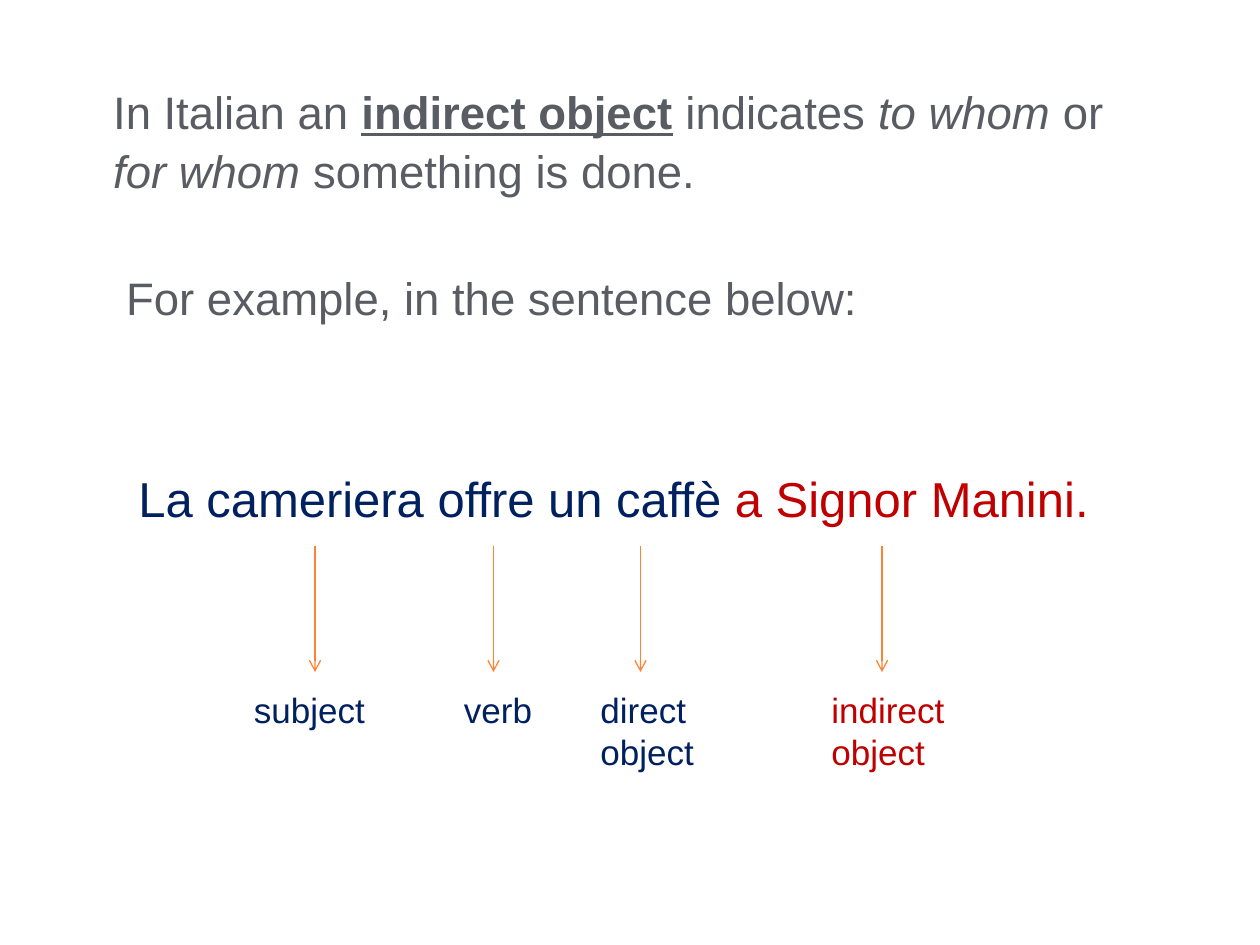
"""Build a slide that explains the indirect object in Italian."""
from lxml import etree
from pptx import Presentation
from pptx.dml.color import RGBColor
from pptx.enum.shapes import MSO_CONNECTOR
from pptx.oxml.ns import qn
from pptx.util import Pt

STRAIGHT = MSO_CONNECTOR.STRAIGHT
GREY = RGBColor(0x59, 0x5D, 0x63)
NAVY = RGBColor(0x00, 0x20, 0x60)
RED = RGBColor(0xC0, 0x00, 0x00)
ORANGE = RGBColor(0xFD, 0x82, 0x31)
FONT = "Arial"

DEFINITION = [
    ("In Italian an ", ""),
    ("indirect object", "bold underline"),
    (" indicates ", ""),
    ("to whom", "italic"),
    (" or ", ""),
    ("for whom", "italic"),
    (" something is done.", ""),
]
LEAD_IN = [("For example, in the sentence below:", "")]
INTRO = [(DEFINITION, 21.6, 11.4), (LEAD_IN, 29, 38.9)]
INTRO_LINE = 33.7

SENTENCE = [("La cameriera offre un caffè ", NAVY), ("a Signor Manini.", RED)]

PARTS = [
    ("subject", NAVY, 138, 90, 31, 180),
    ("verb", NAVY, 258, 78, 31, 282),
    ("direct object", NAVY, 336, 90, 55, 366),
    ("indirect object", RED, 468, 90, 55, 504),
]
ARROW_TOP, ARROW_BOTTOM, LABEL_TOP = 312, 384, 390


def add_text_frame(page, left, top, width, height):
    box = page.shapes.add_textbox(Pt(left), Pt(top), Pt(width), Pt(height))
    box.text_frame.word_wrap = True
    return box.text_frame


def add_span(para, text, size, colour, style=""):
    span = para.add_run()
    span.text = text
    span.font.name = FONT
    span.font.size = Pt(size)
    span.font.color.rgb = colour
    for name in style.split():
        setattr(span.font, name, True)


def add_intro(page):
    frame = add_text_frame(page, 36, 42, 612, 180)
    for index, (spans, indent, space) in enumerate(INTRO):
        para = frame.add_paragraph() if index else frame.paragraphs[0]
        para.line_spacing = Pt(INTRO_LINE)
        para.space_before = Pt(space)
        para._p.get_or_add_pPr().set("marL", str(Pt(indent)))
        for text, style in spans:
            add_span(para, text, 26, GREY, style)


def add_arrow(page, x):
    arrow = page.shapes.add_connector(
        STRAIGHT, Pt(x), Pt(ARROW_TOP), Pt(x), Pt(ARROW_BOTTOM))
    arrow.line.color.rgb = ORANGE
    arrow.line.width = Pt(0.75)
    etree.SubElement(arrow.line._get_or_add_ln(), qn("a:tailEnd"), type="arrow")
    etree.SubElement(arrow._element.spPr, qn("a:effectLst"))


def main():
    deck = Presentation()
    deck.slide_width, deck.slide_height = Pt(720), Pt(540)
    page = deck.slides.add_slide(deck.slide_layouts[6])

    add_intro(page)

    sentence = add_text_frame(page, 72, 264, 576, 41).paragraphs[0]
    for text, colour in SENTENCE:
        add_span(sentence, text, 28, colour)

    for label, colour, left, width, height, arrow_x in PARTS:
        frame = add_text_frame(page, left, LABEL_TOP, width, height)
        add_span(frame.paragraphs[0], label, 20, colour)
        add_arrow(page, arrow_x)

    deck.save("out.pptx")


if __name__ == "__main__":
    main()
